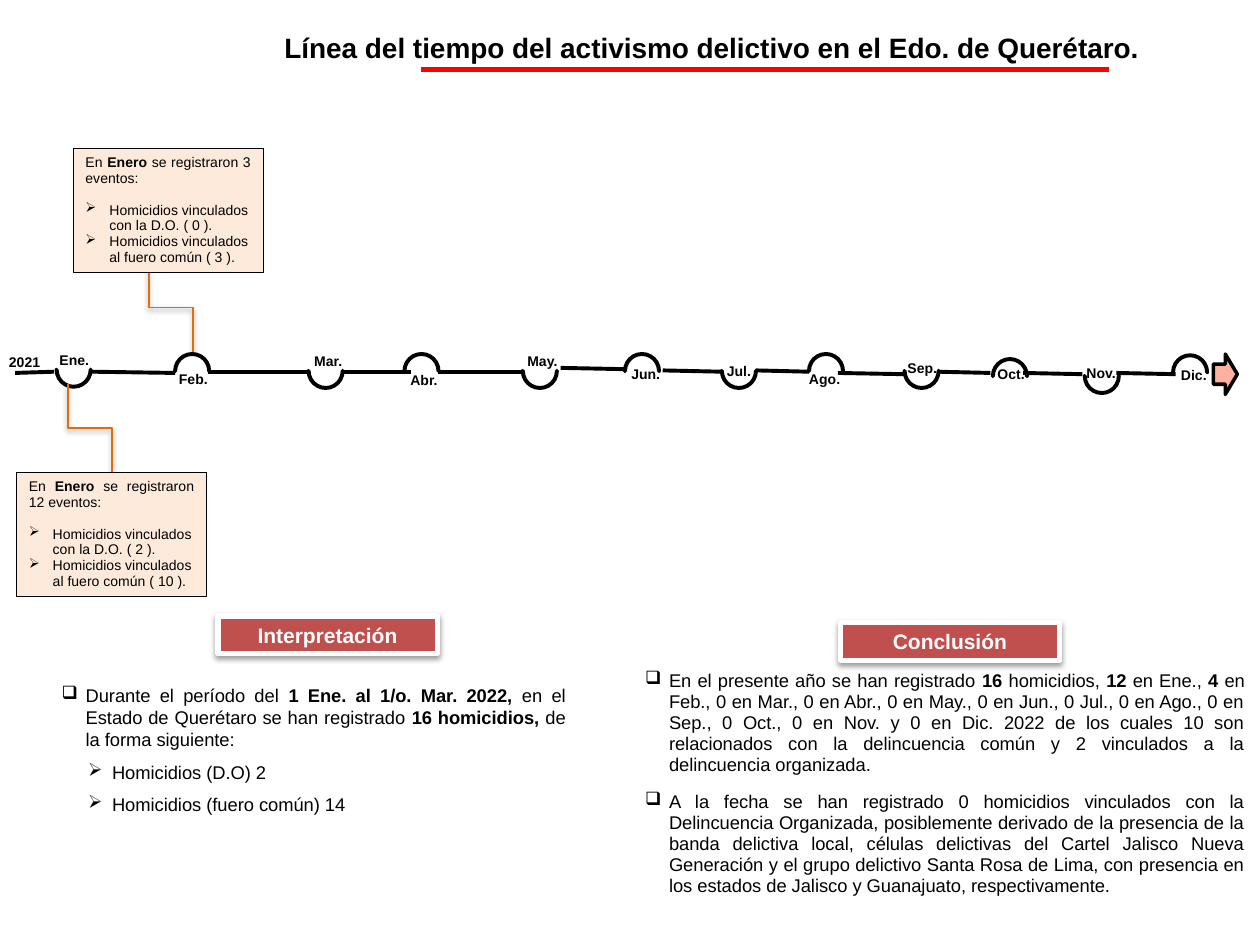
"""Builds the 2021 crime timeline slide for Querétaro."""
from lxml import etree
from pptx import Presentation, util as u
from pptx.dml.color import RGBColor
from pptx.enum import shapes, text
from pptx.oxml.ns import qn

COLORS = dict(black="000000", white="FFFFFF", red="FF0000", orange="E46C0A",
              peach="FDEADA", brick="C0504D", salmon="FFB19F")
TITLE = "Línea del tiempo del activismo delictivo en el Edo. de Querétaro."

# month, label (left, top, width), arc (left, top), arc opens downward
MONTHS = [
    ("Ene.", (0.41, 2.75, 0.36), (0.45, 2.8), False),
    ("Feb.", (1.36, 2.9, 0.35), (1.39, 2.81), True),
    ("Mar.", (2.41, 2.76, 0.39), (2.45, 2.81), False),
    ("Abr.", (3.21, 2.91, 0.31), (3.21, 2.81), True),
    ("May.", (4.11, 2.76, 0.39), (4.15, 2.81), False),
    ("Jun.", (4.97, 2.86, 0.31), (4.96, 2.81), True),
    ("Jul.", (5.71, 2.84, 0.31), (5.73, 2.81), False),
    ("Ago.", (6.36, 2.9, 0.37), (6.42, 2.81), True),
    ("Sep.", (7.15, 2.81, 0.34), (7.18, 2.81), False),
    ("Oct.", (7.87, 2.86, 0.31), (7.88, 2.85), True),
    ("Nov.", (8.57, 2.85, 0.34), (8.61, 2.85), False),
    ("Dic.", (9.32, 2.87, 0.31), (9.31, 2.82), True),
]
SEGMENTS = [
    (0.43, 2.95, 0.12, 2.96), (1.39, 2.96, 0.73, 2.95), (1.65, 2.95, 2.46, 2.95),
    (2.72, 2.95, 3.26, 2.95), (3.48, 2.95, 4.16, 2.95), (4.45, 2.92, 4.96, 2.93),
    (5.26, 2.94, 5.73, 2.95), (6, 2.94, 6.42, 2.95), (6.65, 2.96, 7.17, 2.97),
    (7.44, 2.95, 7.86, 2.96), (8.12, 2.96, 8.59, 2.97), (8.86, 2.96, 9.33, 2.97),
]
# box (left, top), events, organized crime, common crime, elbow start
CALLOUTS = [
    ((0.13, 3.75), 12, 2, 10, (0.54, 3.05)),
    ((0.58, 1.18), 3, 0, 3, (1.18, 2.09)),
]
HEADINGS = [("Interpretación", 1.73, 4.89), ("Conclusión", 6.67, 4.94)]
INTERPRETATION = [
    ("❑", 0.19, "Durante el período del *1 Ene. al 1/o. Mar. 2022,* en el Estado de Querétaro "
     "se han registrado *16 homicidios, *de la forma siguiente:"),
    ("➢", 0.4, "Homicidios (D.O) 2"),
    ("➢", 0.4, "Homicidios (fuero común) 14"),
]
CONCLUSION = [
    ("❑", 0.19, "En el presente año se han registrado *16 *homicidios, *12 *en Ene., *4 *en Feb., "
     "0 en Mar., 0 en Abr., 0 en May., 0 en Jun., 0 Jul., 0 en Ago., 0 en Sep., 0 Oct., "
     "0 en Nov. y 0 en Dic. 2022 de los cuales 10 son relacionados con la delincuencia común "
     "y 2 vinculados a la delincuencia organizada."),
    ("❑", 0.19, "A la fecha se han registrado 0 homicidios vinculados con la Delincuencia "
     "Organizada, posiblemente derivado de la presencia de la banda delictiva local, células "
     "delictivas del Cartel Jalisco Nueva Generación y el grupo delictivo Santa Rosa de Lima, "
     "con presencia en los estados de Jalisco y Guanajuato, respectivamente."),
]
LEFT, CENTER, JUSTIFY = text.PP_ALIGN.LEFT, text.PP_ALIGN.CENTER, text.PP_ALIGN.JUSTIFY
SHAPE = shapes.MSO_SHAPE


def rgb(name):
    return RGBColor.from_string(COLORS[name])


def box(position):
    return [u.Inches(v) for v in position]


def set_line(sp, color, width):
    sp.line.color.rgb = rgb(color)
    sp.line.width = u.Pt(width)


def add_effects(sp, shadow=False):
    effects = etree.SubElement(sp._element.spPr, qn("a:effectLst"))
    if shadow:
        outer = etree.SubElement(effects, qn("a:outerShdw"), blurRad="40000",
                                 dist="20000", dir="5400000", rotWithShape="0")
        black = etree.SubElement(outer, qn("a:srgbClr"), val=COLORS["black"])
        etree.SubElement(black, qn("a:alpha"), val="38000")


def add_shape(s, kind, position, fill, line, width, shadow=False):
    sp = s.shapes.add_shape(kind, *box(position))
    sp.fill.solid()
    sp.fill.fore_color.rgb = rgb(fill)
    set_line(sp, line, width)
    add_effects(sp, shadow)
    return sp


def add_line(s, ends, color, width, kind=shapes.MSO_CONNECTOR.STRAIGHT, shadow=False):
    cx = s.shapes.add_connector(kind, *box(ends))
    set_line(cx, color, width)
    add_effects(cx, shadow)
    return cx


def write(sp, paragraphs, size, color="black", bold=False, inset=(0.1, 0.05),
          wrap=True, anchor=text.MSO_ANCHOR.TOP):
    """Fills a shape; asterisks in the content switch bold on and off."""
    tf = sp.text_frame
    x, y = box(inset)
    frame = dict(word_wrap=wrap, vertical_anchor=anchor, margin_left=x,
                 margin_right=x, margin_top=y, margin_bottom=y)
    for name, value in frame.items():
        setattr(tf, name, value)
    for i, (content, bullet, indent, formats) in enumerate(paragraphs):
        p = tf.paragraphs[0] if i == 0 else tf.add_paragraph()
        if bullet:
            pPr = p._p.get_or_add_pPr()
            pPr.set("marL", str(u.Inches(indent)))
            pPr.set("indent", str(-u.Inches(0.19)))
            etree.SubElement(pPr, qn("a:buChar"), char=bullet)
        for name, value in formats.items():
            setattr(p, name, value)
        for j, part in enumerate(content.split("*")):
            if part:
                r = p.add_run()
                r.text = part
                font = dict(name="Arial", size=u.Pt(size), bold=bold or j % 2 == 1)
                for name, value in font.items():
                    setattr(r.font, name, value)
                r.font.color.rgb = rgb(color)


def add_label(s, content, position, size, **options):
    sp = s.shapes.add_textbox(*box(position))
    write(sp, [(content, None, 0, dict(alignment=CENTER))], size, bold=True, **options)


def add_month(s, month, label, arc, up):
    add_label(s, month, (*label, 0.21), 8, inset=(0.04, 0.04), wrap=False)
    sp = add_shape(s, SHAPE.BLOCK_ARC, (*arc, 0.27, 0.27), "black", "black", 2.25)
    for i, value in enumerate((108, 0.54, 0)):
        sp.adjustments[i] = value
    sp._element.spPr.xfrm.set("flipV", "1")
    sp.rotation = 180 if up else 0


def add_callout(s, corner, events, organized, common, start):
    long, short = 0.7, 0.35
    x, y = start[0] + (short - long) / 2, start[1] + (long - short) / 2
    cx = add_line(s, (x, y, x + long, y + short), "orange", 1,
                  shapes.MSO_CONNECTOR.ELBOW, True)
    for name, value in dict(rot="16200000", flipH="1").items():
        cx._element.spPr.xfrm.set(name, value)
    sp = add_shape(s, SHAPE.RECTANGLE, (*corner, 1.51, 0.98), "peach", "black", 0.25)
    spacing = dict(line_spacing=u.Pt(9))
    item = dict(spacing, alignment=LEFT)
    write(sp, [
        (f"En *Enero* se registraron {events} eventos:", None, 0,
         dict(spacing, alignment=JUSTIFY, space_after=u.Pt(9))),
        (f"Homicidios vinculados con la D.O. ( {organized} ).", "➢", 0.19, item),
        (f"Homicidios vinculados al fuero común ( {common} ).", "➢", 0.19, item),
    ], 8)


def add_body(s, items, position, spacing, after):
    sp = s.shapes.add_textbox(*box(position))
    formats = dict(alignment=JUSTIFY, line_spacing=u.Pt(spacing), space_after=u.Pt(after))
    write(sp, [(content, bullet, indent, formats) for bullet, indent, content in items],
          10.5, inset=(0, 0))


def main():
    prs = Presentation()
    prs.slide_width, prs.slide_height = u.Inches(10), u.Inches(7.5)
    s = prs.slides.add_slide(prs.slide_layouts[6])
    add_line(s, (3.34, 0.55, 8.8, 0.55), "red", 3)
    add_label(s, TITLE, (1.94, 0.19, 7.42, 0.37), 16)
    for ends in SEGMENTS:
        add_line(s, ends, "black", 2.25)
    add_label(s, "2021", (-0.05, 2.81, 0.49, 0.13), 8, inset=(0, 0))
    for month in MONTHS:
        add_month(s, *month)
    add_shape(s, SHAPE.RIGHT_ARROW, (9.63, 2.81, 0.19, 0.32), "salmon", "black", 2)
    for callout in CALLOUTS:
        add_callout(s, *callout)
    add_body(s, INTERPRETATION, (0.49, 5.43, 4, 1.08), 12.6, 6)
    add_body(s, CONCLUSION, (5.12, 5.32, 4.76, 1.81), 12, 9)
    for heading, x, y in HEADINGS:
        sp = add_shape(s, SHAPE.RECTANGLE, (x, y, 1.74, 0.3), "brick", "white", 3, True)
        write(sp, [(heading, None, 0, dict(alignment=CENTER))], 12, "white", True,
              anchor=text.MSO_ANCHOR.MIDDLE)
    prs.save("out.pptx")


if __name__ == "__main__":
    main()
